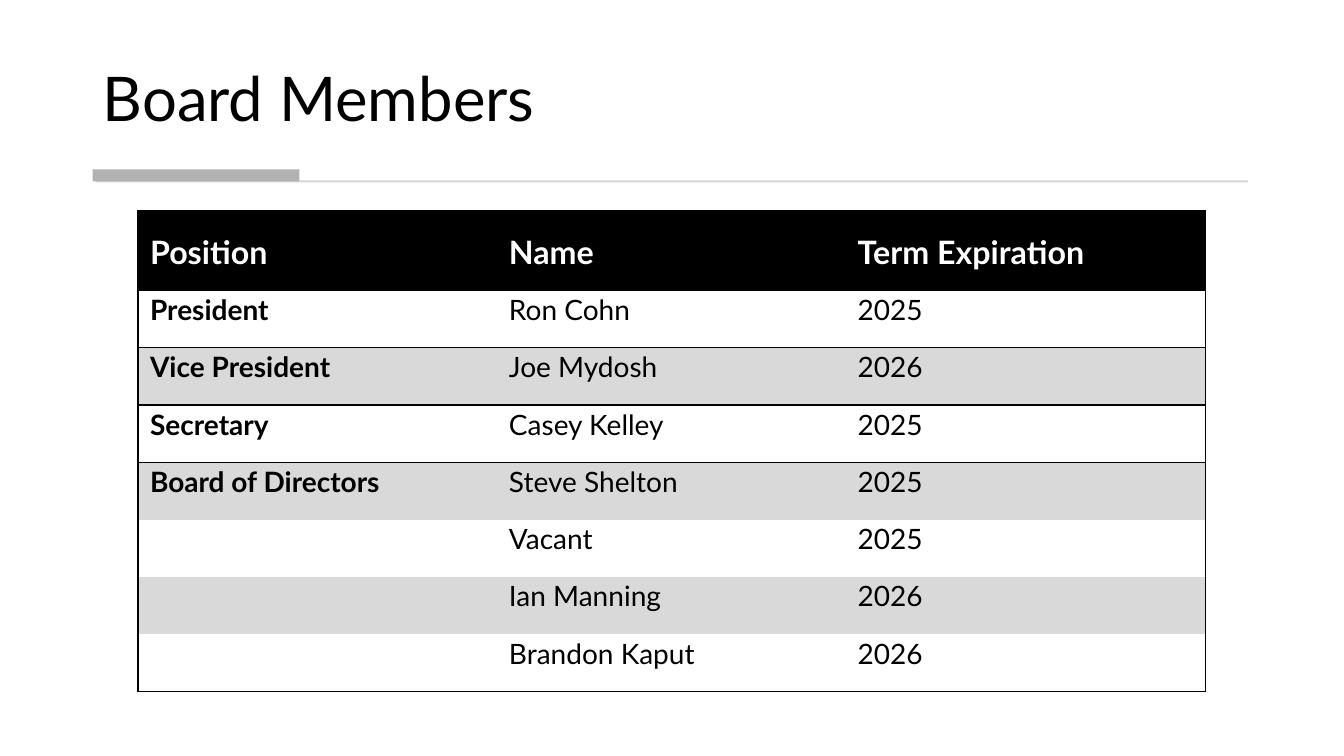
from dataclasses import dataclass

from lxml.etree import SubElement
from pptx import Presentation
from pptx.dml.color import RGBColor
from pptx.enum.shapes import MSO_SHAPE
from pptx.enum.text import MSO_ANCHOR, PP_ALIGN
from pptx.oxml.ns import qn
from pptx.slide import Slide
from pptx.table import Table, _Cell
from pptx.text.text import TextFrame
from pptx.util import Pt


@dataclass(frozen=True)
class Theme:
    font: str = "Lato"
    black: str = "000000"
    white: str = "FFFFFF"
    band: str = "D9D9D9"
    rule: str = "D5D5D5"
    accent: str = "B2B2B2"
    title_size: float = 44
    header_size: float = 23
    body_size: float = 20


@dataclass(frozen=True)
class Bar:
    left: float
    top: float
    width: float
    height: float
    color: str


@dataclass(frozen=True)
class Member:
    position: str
    name: str
    term: str


THEME = Theme()
BARS = [
    Bar(68.4, 128.9, 823, 1.4, THEME.rule),
    Bar(66.2, 121, 147.6, 8.6, THEME.accent),
]
HEADER = Member("Position", "Name", "Term Expiration")
MEMBERS = [
    Member("President", "Ron Cohn", "2025"),
    Member("Vice President", "Joe Mydosh", "2026"),
    Member("Secretary", "Casey Kelley", "2025"),
    Member("Board of Directors", "Steve Shelton", "2025"),
    Member("", "Vacant", "2025"),
    Member("", "Ian Manning", "2026"),
    Member("", "Brandon Kaput", "2026"),
]
COLUMN_WIDTHS = [256.4, 249.1, 257]
HEADER_HEIGHT = 56.9
ROW_HEIGHT = 40.9
RULES_ABOVE_ROWS = {0, 2, 3, 4, len(MEMBERS) + 1}


def write_text(frame: TextFrame, text: str, size: float, color: str,
               bold: bool, line_spacing: float, space_after: float = 0) -> None:
    paragraph = frame.paragraphs[0]
    paragraph.alignment = PP_ALIGN.LEFT
    paragraph.line_spacing = line_spacing
    paragraph.space_after = Pt(space_after)
    run = paragraph.add_run()
    run.text = text
    run.font.name = THEME.font
    run.font.size = Pt(size)
    run.font.bold = bold
    run.font.color.rgb = RGBColor.from_string(color)


def add_title(slide: Slide, text: str) -> None:
    title = slide.shapes.title
    title.left, title.top = Pt(66.2), Pt(20.2)
    title.width, title.height = Pt(827.3), Pt(79.9)
    title.text_frame.vertical_anchor = MSO_ANCHOR.BOTTOM
    write_text(title.text_frame, text, THEME.title_size, THEME.black, False, 0.9)


def add_bar(slide: Slide, bar: Bar) -> None:
    shape = slide.shapes.add_shape(
        MSO_SHAPE.RECTANGLE, Pt(bar.left), Pt(bar.top), Pt(bar.width), Pt(bar.height))
    shape.shadow.inherit = False
    shape.fill.solid()
    shape.fill.fore_color.rgb = RGBColor.from_string(bar.color)
    shape.line.fill.background()


def set_borders(cell: _Cell, row: int, column: int) -> None:
    visible = {
        "a:lnL": column == 0,
        "a:lnR": column == len(COLUMN_WIDTHS) - 1,
        "a:lnT": row in RULES_ABOVE_ROWS,
        "a:lnB": row + 1 in RULES_ABOVE_ROWS,
    }
    properties = cell._tc.get_or_add_tcPr()
    for tag, shown in visible.items():
        line = SubElement(properties, qn(tag), w=str(Pt(1)))
        if shown:
            fill = SubElement(line, qn("a:solidFill"))
            SubElement(fill, qn("a:srgbClr"), val=THEME.black)
        else:
            SubElement(line, qn("a:noFill"))


def fill_cell(table: Table, row: int, column: int, text: str) -> None:
    cell = table.cell(row, column)
    is_header = row == 0
    set_borders(cell, row, column)
    if is_header or row % 2 == 0:
        cell.fill.solid()
        cell.fill.fore_color.rgb = RGBColor.from_string(
            THEME.black if is_header else THEME.band)
    else:
        cell.fill.background()
    if not text:
        return
    cell.margin_left, cell.margin_right = Pt(8.6), Pt(5.8)
    cell.margin_top, cell.margin_bottom = Pt(11.5 if is_header else 0), Pt(11.5)
    cell.vertical_anchor = MSO_ANCHOR.MIDDLE if is_header else MSO_ANCHOR.TOP
    write_text(
        cell.text_frame, text,
        THEME.header_size if is_header else THEME.body_size,
        THEME.white if is_header else THEME.black,
        is_header or column == 0, 1.07, 8)


def add_member_table(slide: Slide) -> None:
    rows = [HEADER, *MEMBERS]
    heights = [HEADER_HEIGHT] + [ROW_HEIGHT] * len(MEMBERS)
    table = slide.shapes.add_table(
        len(rows), len(COLUMN_WIDTHS), Pt(98.6), Pt(150.7),
        Pt(sum(COLUMN_WIDTHS)), Pt(sum(heights))).table
    for column, width in zip(table.columns, COLUMN_WIDTHS):
        column.width = Pt(width)
    for row_index, (member, height) in enumerate(zip(rows, heights)):
        table.rows[row_index].height = Pt(height)
        for column_index, text in enumerate((member.position, member.name, member.term)):
            fill_cell(table, row_index, column_index, text)


def main() -> None:
    presentation = Presentation()
    presentation.slide_width, presentation.slide_height = Pt(960), Pt(540)
    slide = presentation.slides.add_slide(presentation.slide_layouts[5])
    add_title(slide, "Board Members")
    for bar in BARS:
        add_bar(slide, bar)
    add_member_table(slide)
    presentation.save("out.pptx")


if __name__ == "__main__":
    main()
